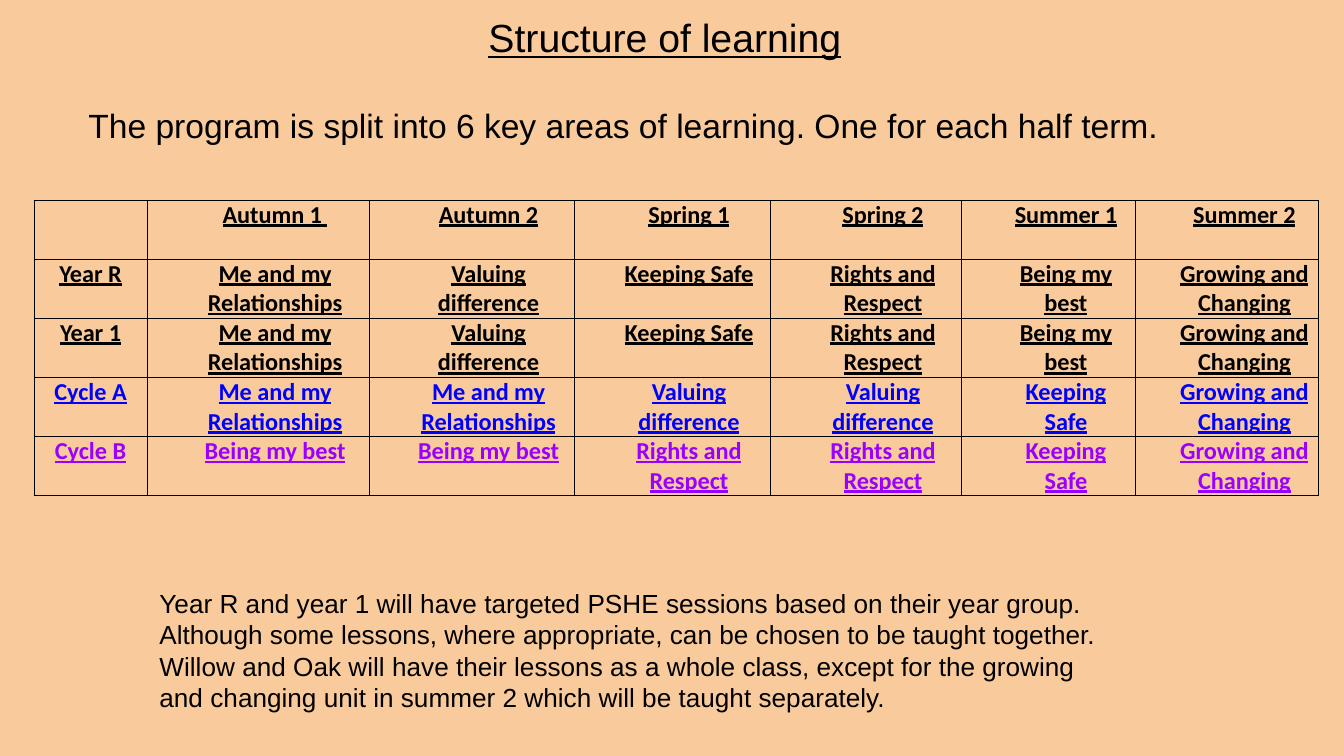
"""Build the slide on how the learning programme is structured over the year."""
from lxml import etree
from pptx import Presentation, util as u
from pptx.dml.color import RGBColor
from pptx.enum import text
from pptx.oxml.ns import qn

PEACH = RGBColor(0xF9, 0xCB, 0x9C)
BLACK = RGBColor(0, 0, 0)
BLUE = RGBColor(0, 0, 0xFF)
PURPLE = RGBColor(0x99, 0, 0xFF)

RELATIONSHIPS = "Me and my Relationships"
DIFFERENCE = "Valuing difference"
SAFE = "Keeping Safe"
RESPECT = "Rights and Respect"
BEST = "Being my best"
GROWING = "Growing and Changing"
YEAR_UNITS = [RELATIONSHIPS, DIFFERENCE, SAFE, RESPECT, BEST, GROWING]

ROWS = [
    (BLACK, ["", "Autumn 1 ", "Autumn 2", "Spring 1", "Spring 2", "Summer 1", "Summer 2"]),
    (BLACK, ["Year R"] + YEAR_UNITS),
    (BLACK, ["Year 1"] + YEAR_UNITS),
    (BLUE, ["Cycle A", RELATIONSHIPS, RELATIONSHIPS, DIFFERENCE, DIFFERENCE, SAFE, GROWING]),
    (PURPLE, ["Cycle B", BEST, BEST, RESPECT, RESPECT, SAFE, GROWING]),
]
COL_WIDTHS = [113, 222, 205, 196, 192, 174, 183]
ROW_HEIGHT = 59
INTRO = "The program is split into 6 key areas of learning. One for each half term."
NOTE = (
    "Year R and year 1 will have targeted PSHE sessions based on their year group. "
    "Although some lessons, where appropriate, can be chosen to be taught together. "
    "Willow and Oak will have their lessons as a whole class, except for the growing "
    "and changing unit in summer 2 which will be taught separately."
)


def px(n):
    """Turn slide pixels into EMU."""
    return u.Emu(round(n * 914400 / 134.4))


def add_run(p, words, size, color=BLACK, font="Arial", bold=False, underline=False):
    """Add one formatted run to a paragraph."""
    r = p.add_run()
    r.text = words
    f = r.font
    f.name, f.size, f.bold, f.underline = font, u.Pt(size), bold, underline
    f.color.rgb = color


def set_indent(p, left):
    """Set the left margin of a paragraph without a first-line indent."""
    pPr = p._p.get_or_add_pPr()
    pPr.set("marL", str(px(left)))
    pPr.set("indent", "0")
    return pPr


def place(sp, left, top, width, height):
    """Move a placeholder and give its text frame even insets."""
    sp.left, sp.top, sp.width, sp.height = map(px, (left, top, width, height))
    tf = sp.text_frame
    tf.margin_left = tf.margin_right = tf.margin_top = tf.margin_bottom = u.Inches(0.1)
    tf.vertical_anchor = text.MSO_ANCHOR.TOP
    tf.word_wrap = True
    tf.auto_size = text.MSO_AUTO_SIZE.NONE
    return tf


def add_heading(sp):
    """Write the underlined heading and the line that introduces the table."""
    tf = place(sp, 75, 0, 1180, 163)
    p = tf.paragraphs[0]
    p.alignment = text.PP_ALIGN.CENTER
    add_run(p, "Structure of learning", 21, underline=True)
    p = tf.add_paragraph()
    p.alignment = text.PP_ALIGN.LEFT
    p.space_before = u.Pt(24)
    add_run(p, INTRO, 18)


def add_note(sp):
    """Write the closing note as plain body text."""
    p = place(sp, 146, 574, 969, 153).paragraphs[0]
    p.space_before = u.Pt(0)
    etree.SubElement(set_indent(p, 0), qn("a:buNone"))
    add_run(p, NOTE, 14)


def add_borders(cell):
    """Draw a thin black line on each side of a cell."""
    tcPr = cell._tc.get_or_add_tcPr()
    for i, side in enumerate(("a:lnL", "a:lnR", "a:lnT", "a:lnB")):
        ln = etree.Element(qn(side), w=str(u.Pt(0.5)))
        fill = etree.SubElement(ln, qn("a:solidFill"))
        etree.SubElement(fill, qn("a:srgbClr"), val=str(BLACK))
        tcPr.insert(i, ln)


def fill_cell(cell, words, color, indent):
    """Format one table cell and write its words."""
    cell.fill.background()
    add_borders(cell)
    cell.margin_left = cell.margin_right = u.Inches(0.07)
    cell.margin_top = cell.margin_bottom = 0
    if words:
        p = cell.text_frame.paragraphs[0]
        p.alignment = text.PP_ALIGN.CENTER
        set_indent(p, indent)
        add_run(p, words, 13, color, "Calibri", bold=True, underline=True)


def add_units_table(s):
    """Add the table of units for each class and half term."""
    size = px(sum(COL_WIDTHS)), px(ROW_HEIGHT * len(ROWS))
    table = s.shapes.add_table(len(ROWS), len(COL_WIDTHS), px(34), px(200), *size).table
    table.first_row = table.horz_banding = False
    for col, width in zip(table.columns, COL_WIDTHS):
        col.width = px(width)
    for row, (color, labels) in zip(table.rows, ROWS):
        row.height = px(ROW_HEIGHT)
        for i, (cell, words) in enumerate(zip(row.cells, labels)):
            fill_cell(cell, words, color, 34 if i else 0)


def main():
    """Build and save the slide."""
    prs = Presentation()
    prs.slide_width, prs.slide_height = px(1344), px(756)
    s = prs.slides.add_slide(prs.slide_layouts[1])
    s.background.fill.solid()
    s.background.fill.fore_color.rgb = PEACH
    add_units_table(s)
    add_heading(s.shapes.title)
    add_note(s.placeholders[1])
    prs.save("out.pptx")


if __name__ == "__main__":
    main()
